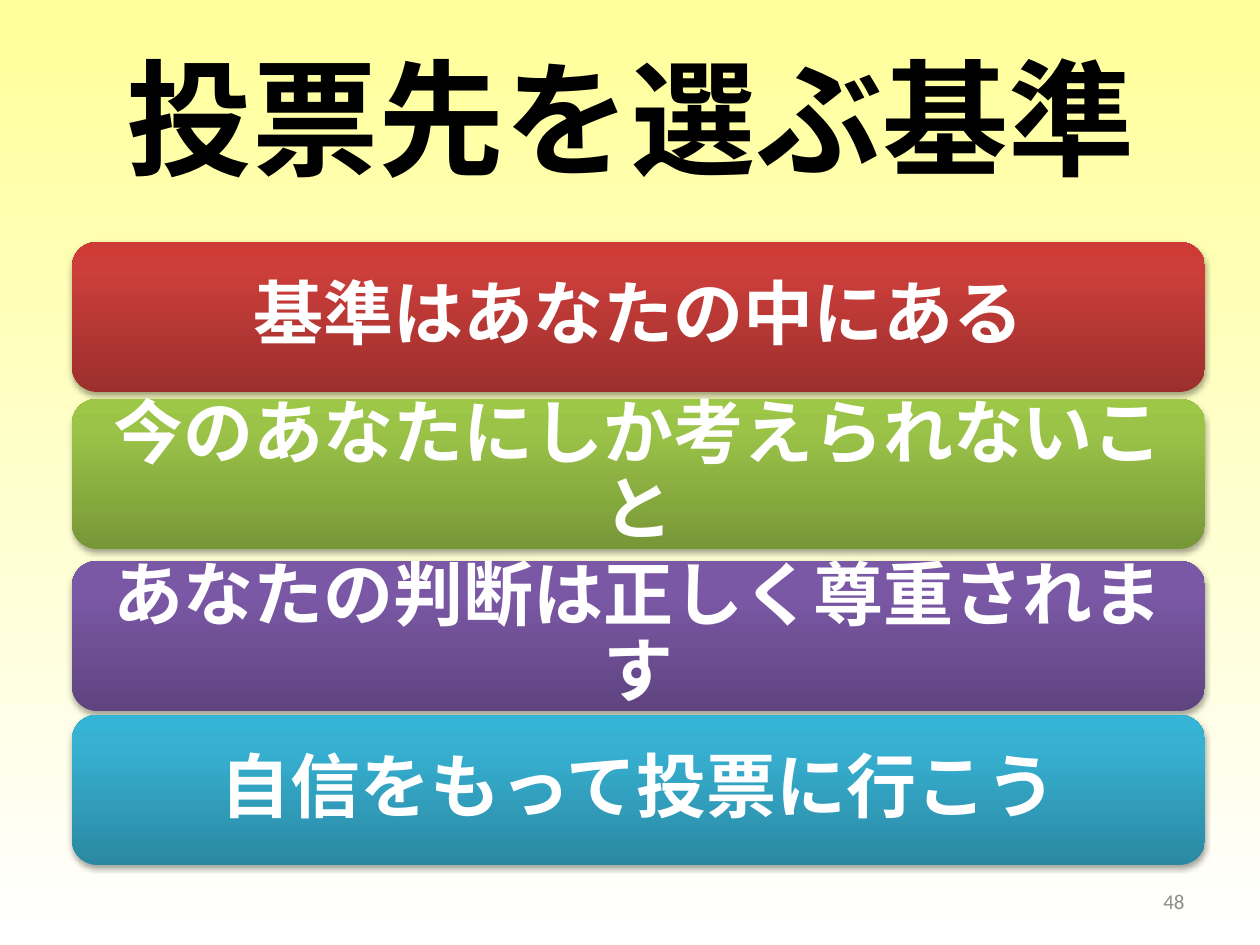
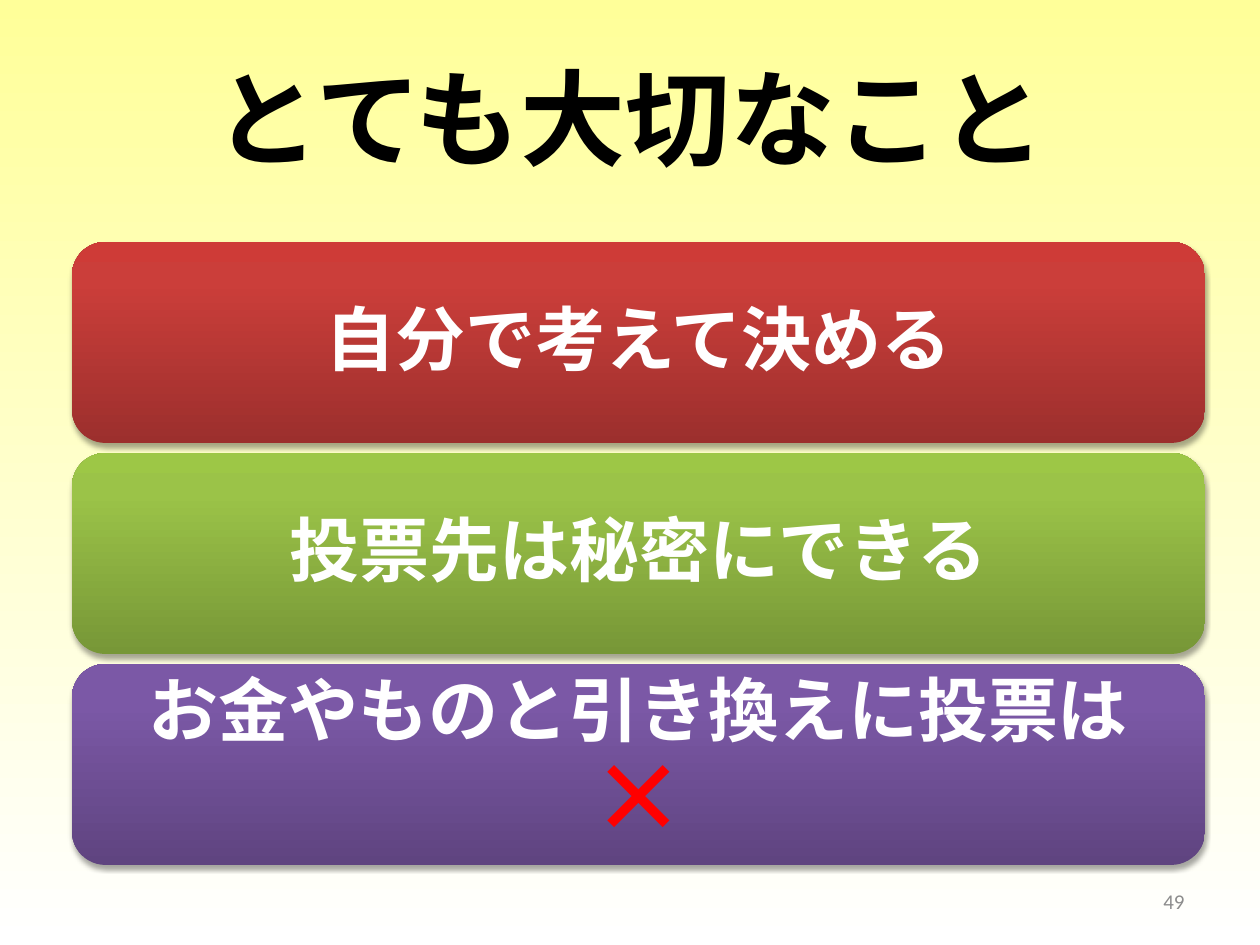
from lxml.etree import SubElement
from pptx import Presentation
from pptx.dml.color import RGBColor
from pptx.enum.shapes import MSO_SHAPE
from pptx.enum.text import MSO_ANCHOR, MSO_AUTO_SIZE, PP_ALIGN
from pptx.oxml.ns import qn
from pptx.util import Emu, Pt

PIXELS_PER_INCH = 126
TITLE_ONLY = 5
FIRST_NUMBER = 48
JAPANESE_FONT = "Noto Sans CJK JP"
NUMBER_FONT = "Calibri"
COLORS = {
    "title": "000000",
    "bar text": "FFFFFF",
    "cross": "FF0000",
    "number": "8C8C8C",
    "shadow": "000000",
}
BACKGROUND = [(0, "FFFF99"), (100, "FFFFFF")]
# Bar gradients run from the bottom edge to the top edge.
BAR_GRADIENTS = [
    [(0, "9C2F2D"), (80, "CB3E3A"), (100, "CE3B37")],
    [(0, "779737"), (80, "9BC348"), (100, "9DC746")],
    [(0, "5F4480"), (80, "7B58A6"), (100, "7C57A8")],
    [(0, "2A88A2"), (80, "37B1D2"), (100, "34B4D6")],
]
BAR_LEFT, BAR_WIDTH = 72, 1133


def px(length):
    return Emu(round(length * 914400 / PIXELS_PER_INCH))


def rgb(name):
    return RGBColor.from_string(COLORS[name])


def fill_gradient(fill, element, stops, angle):
    """Fill with (percent, hex) stops; the angle is counter-clockwise."""
    fill.gradient()
    fill.gradient_angle = angle
    stop_list = next(element.iter(qn("a:gsLst")))
    for old_stop in list(stop_list):
        stop_list.remove(old_stop)
    for percent, color in stops:
        stop = SubElement(stop_list, qn("a:gs"), pos=str(percent * 1000))
        SubElement(stop, qn("a:srgbClr"), val=color)


def add_shadow(shape):
    shape.shadow.inherit = False
    effects = next(shape.element.iter(qn("a:effectLst")))
    shadow = SubElement(effects, qn("a:outerShdw"), blurRad="40000",
                        dist="23000", dir="5400000", rotWithShape="0")
    color = SubElement(shadow, qn("a:srgbClr"), val=COLORS["shadow"])
    SubElement(color, qn("a:alpha"), val="35000")


def style_paragraph(paragraph, size, color, alignment=PP_ALIGN.CENTER,
                    name=JAPANESE_FONT, bold=True):
    paragraph.alignment = alignment
    font = paragraph.font
    font.size, font.bold, font.name = Pt(size), bold, name
    font.color.rgb = rgb(color)
    properties = next(paragraph._p.iter(qn("a:defRPr")))
    SubElement(properties, qn("a:ea"), typeface=name)


def place(shape, left, top, width, height):
    shape.left, shape.top = px(left), px(top)
    shape.width, shape.height = px(width), px(height)


def set_title(slide, text, size):
    title = slide.shapes.title
    place(title, 63, 38, 1134, 157)
    frame = title.text_frame
    frame.text = text
    frame.auto_size = MSO_AUTO_SIZE.NONE
    frame.vertical_anchor = MSO_ANCHOR.MIDDLE
    style_paragraph(frame.paragraphs[0], size, "title")


def add_slide_number(slide, number):
    box = slide.shapes.add_textbox(px(903), px(876), px(294), px(50))
    frame = box.text_frame
    frame.word_wrap = True
    frame.vertical_anchor = MSO_ANCHOR.MIDDLE
    frame.text = str(number)
    style_paragraph(frame.paragraphs[0], 12, "number", PP_ALIGN.RIGHT,
                    NUMBER_FONT, bold=False)


def add_bar(slide, text, top, height, stops):
    bar = slide.shapes.add_shape(MSO_SHAPE.ROUNDED_RECTANGLE, px(BAR_LEFT),
                                 px(top), px(BAR_WIDTH), px(height))
    fill_gradient(bar.fill, bar.element, stops, 90)
    bar.line.fill.background()
    add_shadow(bar)
    frame = bar.text_frame
    frame.word_wrap = True
    frame.vertical_anchor = MSO_ANCHOR.MIDDLE
    frame.margin_left = frame.margin_right = px(22)
    frame.margin_top = frame.margin_bottom = px(10)
    frame.text = text
    paragraph = frame.paragraphs[0]
    paragraph.line_spacing = 0.9
    style_paragraph(paragraph, 40, "bar text")
    return paragraph


def add_cross(paragraph):
    run = paragraph.add_run()
    run.text = "×"
    run.font.size = Pt(54)
    run.font.color.rgb = rgb("cross")


def add_bar_slide(presentation, title, title_size, bar_height, bars):
    """Add a slide with stacked bars and return the last bar's paragraph."""
    layout = presentation.slide_layouts[TITLE_ONLY]
    slide = presentation.slides.add_slide(layout)
    set_title(slide, title, title_size)
    add_slide_number(slide, FIRST_NUMBER + len(presentation.slides) - 1)
    for (top, text), stops in zip(bars, BAR_GRADIENTS):
        paragraph = add_bar(slide, text, top, bar_height, stops)
    return paragraph


def main():
    presentation = Presentation()
    presentation.slide_width, presentation.slide_height = px(1260), px(945)
    master = presentation.slide_master
    fill_gradient(master.background.fill, master.element, BACKGROUND, 270)

    add_bar_slide(presentation, "投票先を選ぶ基準", 72, 150, [
        (242, "基準はあなたの中にある"),
        (399, "今のあなたにしか考えられないこと"),
        (561, "あなたの判断は正しく尊重されます"),
        (715, "自信をもって投票に行こう"),
    ])
    exchange = add_bar_slide(presentation, "とても大切なこと", 60, 201, [
        (242, "自分で考えて決める"),
        (453, "投票先は秘密にできる"),
        (664, "お金やものと引き換えに投票は"),
    ])
    add_cross(exchange)
    presentation.save("out.pptx")


if __name__ == "__main__":
    main()
